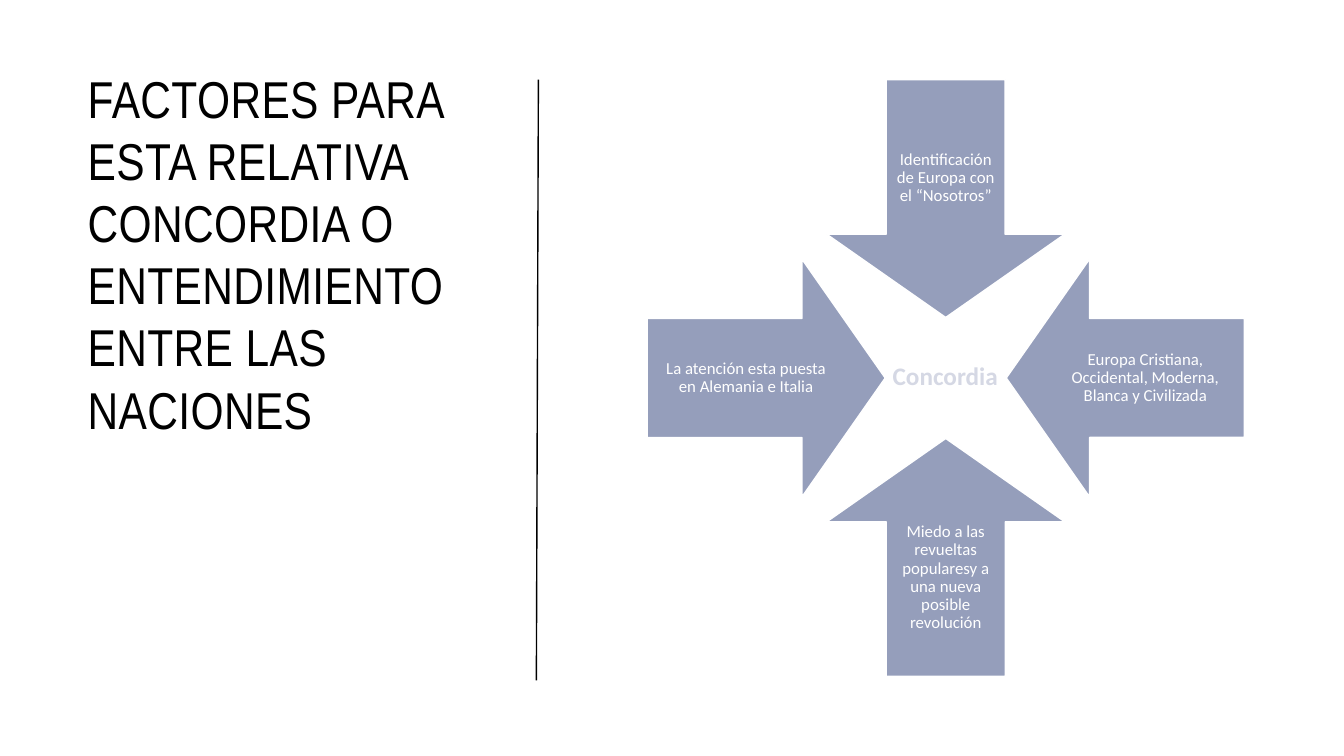
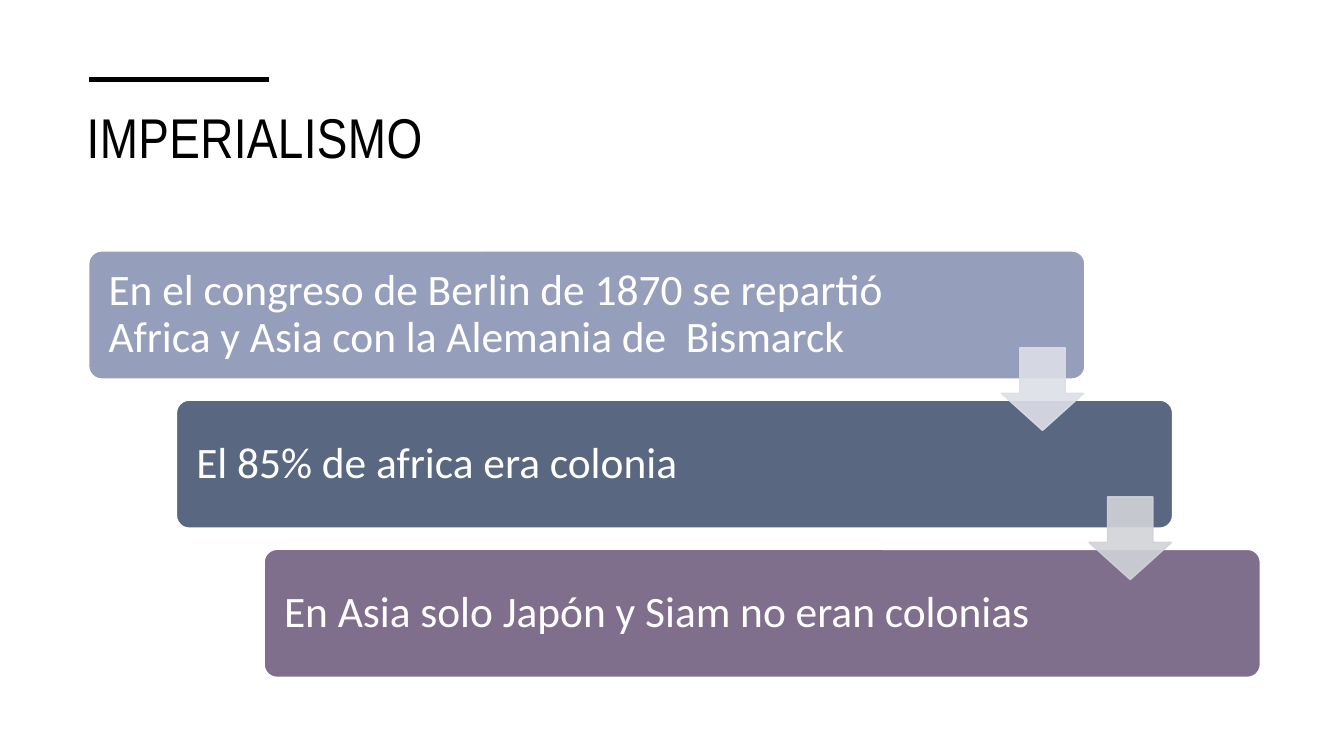
from math import cos, radians, sin

from lxml.etree import SubElement
from pptx import Presentation
from pptx.dml.color import RGBColor
from pptx.enum.shapes import MSO_CONNECTOR, MSO_SHAPE
from pptx.enum.text import MSO_ANCHOR, MSO_AUTO_SIZE, PP_ALIGN
from pptx.oxml import parse_xml
from pptx.oxml.ns import nsdecls, qn
from pptx.util import Inches, Pt

BLACK, WHITE = "000000", "FFFFFF"
PERIWINKLE, SLATE, PLUM = "959EBB", "596781", "7F6E8C"


def paint(fill, color):
    """Give a shape, line or font fill a solid colour."""
    fill.solid()
    fill.fore_color.rgb = RGBColor.from_string(color)


def write(sp, text, size, color=WHITE, font="Calibri", bold=False,
          align=PP_ALIGN.CENTER, anchor=MSO_ANCHOR.MIDDLE,
          insets=(0.1, 0.05, 0.1, 0.05), leading=1.0, tracking=0):
    tf = sp.text_frame
    tf.word_wrap = True
    tf.auto_size = MSO_AUTO_SIZE.NONE
    tf.vertical_anchor = anchor
    (tf.margin_left, tf.margin_top,
     tf.margin_right, tf.margin_bottom) = [Inches(i) for i in insets]
    p = tf.paragraphs[0]
    p.alignment = align
    p.line_spacing = leading
    r = p.add_run()
    r.text = text
    r.font.name, r.font.size, r.font.bold = font, Pt(size), bold
    paint(r.font.fill, color)
    if tracking:
        r.font._element.set("spc", str(int(tracking * 100)))
    return r


prs = Presentation()
prs.slide_width, prs.slide_height = Inches(13.33), Inches(7.5)

# Both slides: title and black rule
pages = [
    ("FACTORES PARA ESTA RELATIVA CONCORDIA O ENTENDIMIENTO ENTRE LAS NACIONES",
     37, (0.77, 0.61, 3.96, 4.99), (5.32, 6.75, 5.34, 0.79), 1),
    ("IMPERIALISMO",
     40, (0.76, 0.97, 11.81, 1.15), (0.88, 0.79, 2.67, 0.79), 3.5),
]
slides = []
for text, size, box, rule, weight in pages:
    s = prs.slides.add_slide(prs.slide_layouts[5])
    title = s.shapes.title
    title.left, title.top, title.width, title.height = [Inches(v) for v in box]
    write(title, text, size, BLACK, "Arial Narrow", align=PP_ALIGN.LEFT,
          anchor=MSO_ANCHOR.TOP, tracking=0.3)
    line = s.shapes.add_connector(MSO_CONNECTOR.STRAIGHT,
                                  *[Inches(v) for v in rule])
    paint(line.line.fill, BLACK)
    line.line.width = Pt(weight)
    SubElement(line.element.spPr, qn("a:effectLst"))
    slides.append(s)
factors, imperialism = slides

# Slide 1: four arrows pointing at the centre, clockwise from the top
CX, CY, ARROW = 9.38, 3.75, 2.36
ARROW_DIST, LABEL_DIST = 1.78, 1.98
LABEL_LONG, LABEL_SHORT = 1.95, 1.18
labels = [
    "Identificación de Europa con el “Nosotros”",
    "Europa Cristiana, Occidental, Moderna, Blanca y Civilizada",
    "Miedo a las revueltas popularesy a una nueva posible revolución",
    "La atención esta puesta en Alemania e Italia",
]
for i, text in enumerate(labels):
    angle = 90 * i
    dx, dy = sin(radians(angle)), -cos(radians(angle))
    sp = factors.shapes.add_shape(
        MSO_SHAPE.DOWN_ARROW,
        Inches(CX + ARROW_DIST * dx - ARROW / 2),
        Inches(CY + ARROW_DIST * dy - ARROW / 2),
        Inches(ARROW), Inches(ARROW))
    sp.adjustments[0], sp.adjustments[1] = 0.5, 0.35
    sp.rotation = angle
    sp.shadow.inherit = False
    paint(sp.fill, PERIWINKLE)
    paint(sp.line.fill, WHITE)
    sp.line.width = Pt(1)

    # Upright label over the arrow's shaft
    w, h = (LABEL_LONG, LABEL_SHORT) if i % 2 else (LABEL_SHORT, LABEL_LONG)
    label = factors.shapes.add_textbox(
        Inches(CX + LABEL_DIST * dx - w / 2),
        Inches(CY + LABEL_DIST * dy - h / 2), Inches(w), Inches(h))
    write(label, text, 12, insets=(0.09,) * 4, leading=0.9)

# Outlined word at the centre
center = factors.shapes.add_textbox(Inches(6.72), Inches(3.53),
                                    Inches(5.31), Inches(0.4))
r = write(center, "Concordia", 18, "D5D8E4", bold=True, anchor=MSO_ANCHOR.TOP)
r.font._element.insert(0, parse_xml(
    f'<a:ln {nsdecls("a")} w="{Pt(1.75)}"><a:solidFill>'
    f'<a:srgbClr val="{PERIWINKLE}"/></a:solidFill></a:ln>'))

# Slide 2: staircase of three steps
LEFT, TOP, STEP_X, STEP_Y = 0.88, 2.49, 0.87, 1.48
steps = [
    ("En el congreso de Berlin de 1870 se repartió Africa y Asia "
     "con la Alemania de  Bismarck", PERIWINKLE),
    ("El 85% de africa era colonia", SLATE),
    ("En Asia solo Japón y Siam no eran colonias", PLUM),
]
for i, (text, color) in enumerate(steps):
    sp = imperialism.shapes.add_shape(
        MSO_SHAPE.ROUNDED_RECTANGLE,
        Inches(LEFT + STEP_X * i), Inches(TOP + STEP_Y * i),
        Inches(9.88), Inches(1.27))
    sp.adjustments[0] = 0.1
    sp.shadow.inherit = False
    paint(sp.fill, color)
    paint(sp.line.fill, WHITE)
    sp.line.width = Pt(1)
    write(sp, text, 31, align=PP_ALIGN.LEFT,
          insets=(0.16, 0.13, 1.46, 0.13), leading=0.9)

# Translucent arrows between the steps
for i, color in enumerate(["DDDFE7", "D1D3D8"]):
    sp = imperialism.shapes.add_shape(
        MSO_SHAPE.DOWN_ARROW,
        Inches(LEFT + 9.05 + STEP_X * i), Inches(TOP + 0.96 + STEP_Y * i),
        Inches(0.82), Inches(0.82))
    sp.adjustments[0], sp.adjustments[1] = 0.55, 0.45
    sp.shadow.inherit = False
    paint(sp.fill, color)
    paint(sp.line.fill, color)
    sp.line.width = Pt(1)
    for clr in sp.element.spPr.findall(".//" + qn("a:srgbClr")):
        SubElement(clr, qn("a:alpha"), val="90000")

prs.save("out.pptx")
